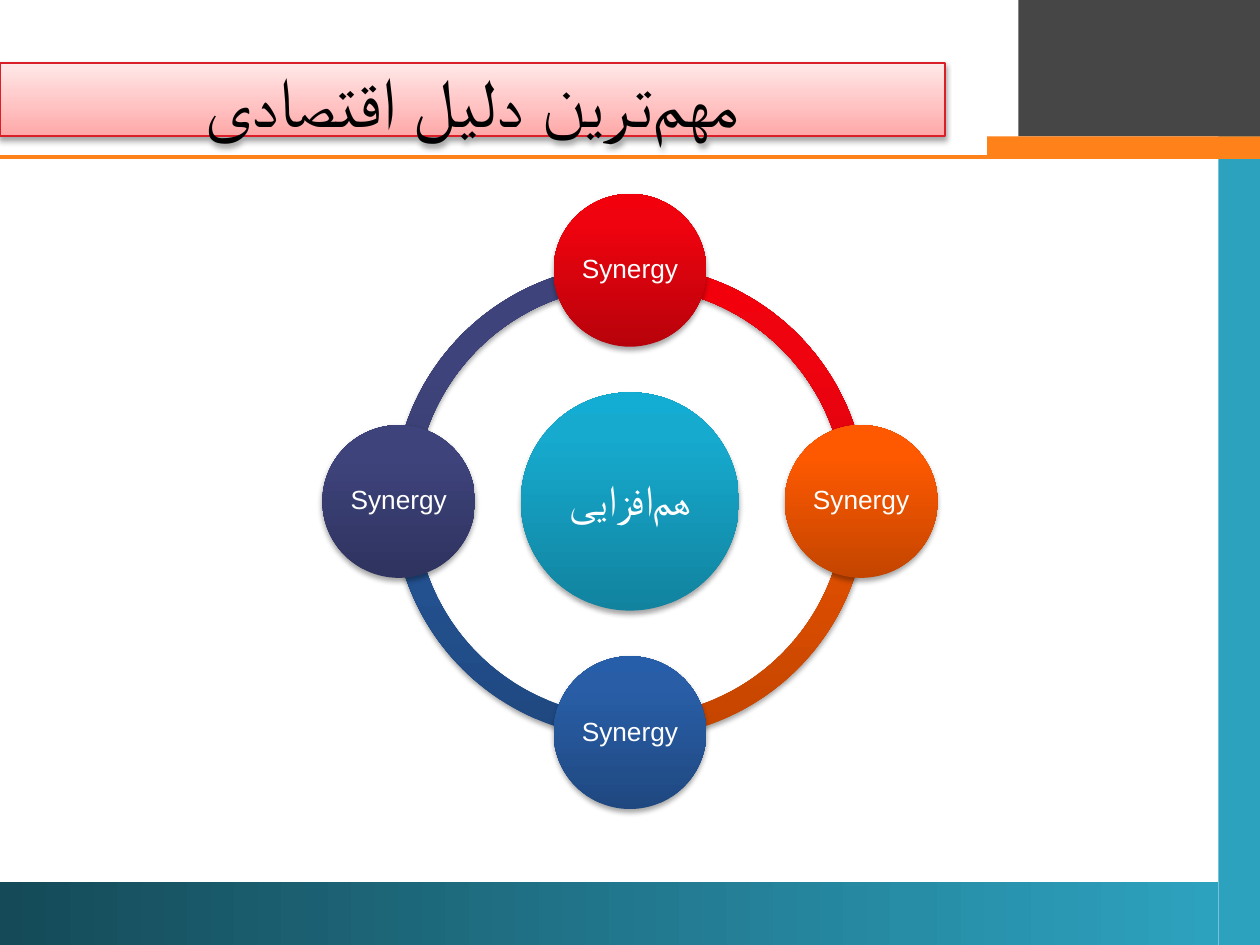
from lxml.etree import SubElement
from pptx import Presentation
from pptx.dml.color import RGBColor
from pptx.enum.shapes import MSO_CONNECTOR, MSO_SHAPE
from pptx.enum.text import MSO_ANCHOR, PP_ALIGN
from pptx.oxml.ns import qn
from pptx.util import Cm, Pt

WIDTH, HEIGHT = 25.4, 19.05
CENTER_X, CENTER_Y = 12.7, 10.11
ORBIT, RING, HUB, SATELLITE = 4.66, 9.55, 4.4, 3.08
QUARTER = 54  # 90 degrees in block arc adjustment units

HALF_SPACE = chr(0x200C)  # Persian zero-width non-joiner
TITLE = HALF_SPACE.join(["مهم", "ترین دلیل اقتصادی"])
HUB_LABEL = HALF_SPACE.join(["هم", "افزایی"])

HUB_STOPS = [(0, "11839F"), (80, "16AACE"), (100, "13ADD3")]
# Clockwise from the top: label, direction from the centre, gradient
SATELLITES = [
    ("Synergy", (0, -1), [(0, "B8020B"), (80, "EE030E"), (100, "F2000C")]),
    ("Synergy", (1, 0), [(0, "C44500"), (80, "FE5900"), (100, "FF5A00")]),
    ("Synergy", (0, 1), [(0, "1F4880"), (80, "295EA7"), (100, "265EAA")]),
    ("Synergy", (-1, 0), [(0, "2F335F"), (80, "3E437B"), (100, "3D427D")]),
]


def color(value):
    return RGBColor.from_string(value)


def add_block(slide, kind, left, top, width, height, fill=None):
    block = slide.shapes.add_shape(kind, Cm(left), Cm(top), Cm(width), Cm(height))
    block.shadow.inherit = False
    block.line.fill.background()
    if fill:
        block.fill.solid()
        block.fill.fore_color.rgb = color(fill)
    return block


def set_gradient(block, stops, angle=90):
    block.fill.gradient()
    block.fill.gradient_angle = angle
    stop_list = block._element.spPr.find(qn("a:gradFill")).find(qn("a:gsLst"))
    for old in list(stop_list):
        stop_list.remove(old)
    for position, value in stops:
        stop = SubElement(stop_list, qn("a:gs"), pos=str(position * 1000))
        SubElement(stop, qn("a:srgbClr"), val=value)


def set_shadow(block):
    effects = block._element.spPr.find(qn("a:effectLst"))
    shadow = SubElement(effects, qn("a:outerShdw"), blurRad=str(Pt(3.1)),
                        dist=str(Pt(1.8)), dir="5400000", rotWithShape="0")
    tint = SubElement(shadow, qn("a:srgbClr"), val="000000")
    SubElement(tint, qn("a:alpha"), val="35000")


def set_text(block, text, size, value, spacing=1.0, inset=0.05):
    frame = block.text_frame
    frame.word_wrap = False
    frame.vertical_anchor = MSO_ANCHOR.MIDDLE
    frame.margin_left = frame.margin_right = Cm(inset)
    frame.margin_top = frame.margin_bottom = Cm(inset)
    paragraph = frame.paragraphs[0]
    paragraph.alignment = PP_ALIGN.CENTER
    paragraph.line_spacing = spacing
    paragraph._p.get_or_add_pPr().set("rtl", "1")
    run = paragraph.add_run()
    run.text = text
    run.font.size = Pt(size)
    run.font.name = "Arial"
    run.font.color.rgb = color(value)
    SubElement(run._r.get_or_add_rPr(), qn("a:cs"), typeface="Arial")


def add_rule(slide, y, value, weight):
    rule = slide.shapes.add_connector(
        MSO_CONNECTOR.STRAIGHT, Cm(WIDTH), Cm(y), Cm(0), Cm(y))
    rule.line.color.rgb = color(value)
    rule.line.width = Pt(weight)
    SubElement(rule._element.spPr, qn("a:effectLst"))


def add_disc(slide, x, y, diameter, stops, text, size):
    disc = add_block(slide, MSO_SHAPE.OVAL, x - diameter / 2, y - diameter / 2,
                     diameter, diameter)
    set_gradient(disc, stops)
    set_shadow(disc)
    set_text(disc, text, size, "FFFFFF", spacing=0.9)


def add_arc(slide, index, stops):
    arc = add_block(slide, MSO_SHAPE.BLOCK_ARC, CENTER_X - RING / 2,
                    CENTER_Y - RING / 2, RING, RING)
    arc.adjustments[0] = QUARTER * ((index + 3) % 4)
    arc.adjustments[1] = QUARTER * index
    arc.adjustments[2] = 0.046
    set_gradient(arc, stops)
    set_shadow(arc)


def add_frame(slide):
    add_block(slide, MSO_SHAPE.RECTANGLE, 24.56, 0.64, 0.84, 18.41, "2DA2BF")
    footer = add_block(slide, MSO_SHAPE.RECTANGLE, 0, 17.78, 24.56, 1.27)
    set_gradient(footer, [(0, "154A58"), (100, "2DA2BF")], angle=0)
    add_block(slide, MSO_SHAPE.RECTANGLE, 20.53, 0, 4.87, 2.75, "464646")
    add_rule(slide, 3.17, "FF8119", 2.25)
    add_block(slide, MSO_SHAPE.RECTANGLE, 19.9, 2.75, 5.5, 0.43, "FF8119")


def add_title(slide, text):
    title = add_block(slide, MSO_SHAPE.RECTANGLE, 0, 1.27, 19.05, 1.48)
    set_gradient(title, [(0, "FFA8A8"), (100, "FFE8E8")])
    title.line.color.rgb = color("DA1F28")
    title.line.width = Pt(1)
    set_shadow(title)
    set_text(title, text, 40, "000000", inset=0.13)


def add_cycle(slide):
    # Ring segments, each running clockwise from its satellite
    for index, (_, _, stops) in reversed(list(enumerate(SATELLITES))):
        add_arc(slide, index, stops)
    # Hub and satellites
    add_disc(slide, CENTER_X, CENTER_Y, HUB, HUB_STOPS, HUB_LABEL, 24)
    for label, (dx, dy), stops in SATELLITES:
        add_disc(slide, CENTER_X + dx * ORBIT, CENTER_Y + dy * ORBIT,
                 SATELLITE, stops, label, 15)


def main():
    deck = Presentation()
    deck.slide_width, deck.slide_height = Cm(WIDTH), Cm(HEIGHT)
    slide = deck.slides.add_slide(deck.slide_layouts[6])
    add_frame(slide)
    add_title(slide, TITLE)
    add_cycle(slide)
    deck.save("out.pptx")


if __name__ == "__main__":
    main()
